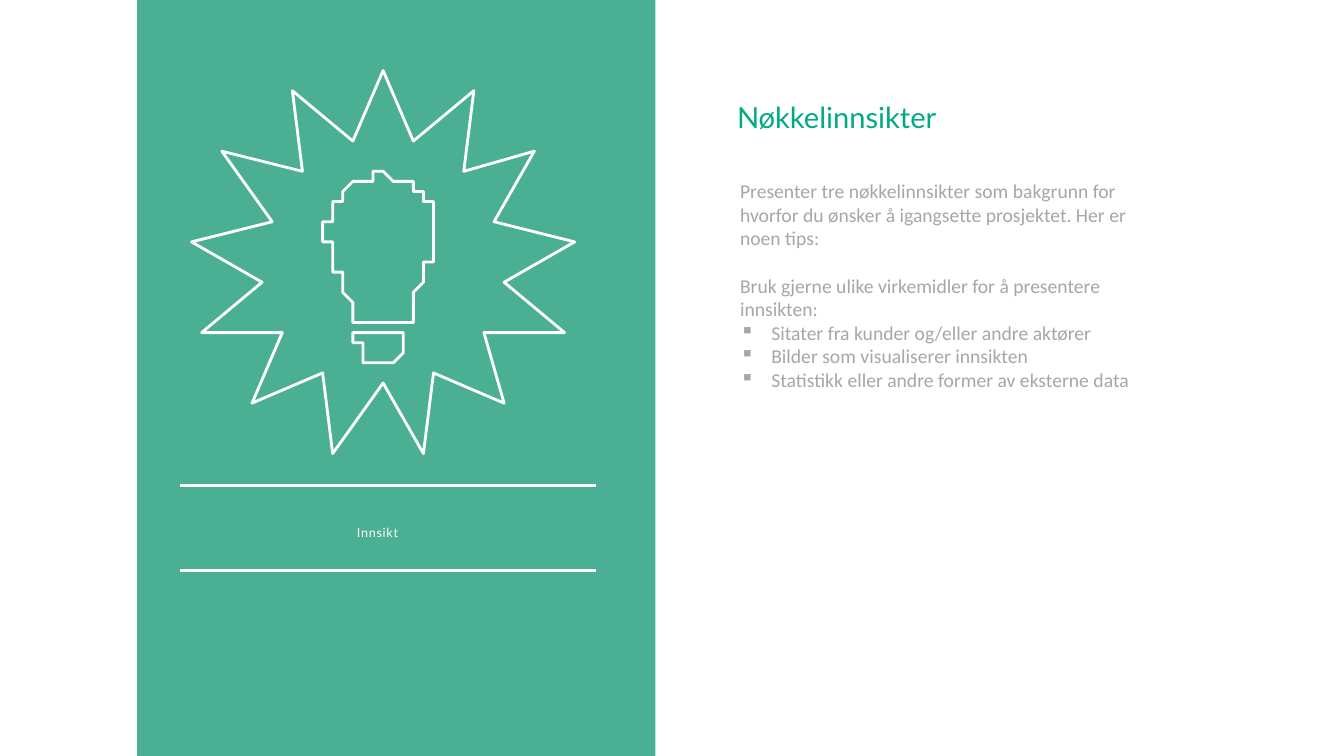
from math import cos, pi, radians, sin
from lxml.etree import SubElement
from pptx import Presentation
from pptx.dml.color import RGBColor
from pptx.enum.shapes import MSO_CONNECTOR, MSO_SHAPE
from pptx.enum.text import MSO_ANCHOR, MSO_AUTO_SIZE, PP_ALIGN
from pptx.oxml.ns import qn
from pptx.util import Inches, Pt

GREEN = RGBColor(0x4B, 0xAF, 0x94)
TEAL = RGBColor(0x00, 0xAB, 0x84)
GRAY = RGBColor(0xA6, 0xA6, 0xA6)
WHITE = RGBColor(0xFF, 0xFF, 0xFF)
ROWS = 75


class Deck:
    def __init__(self):
        self.show = Presentation()
        self.show.slide_width = Inches(13.33)
        self.show.slide_height = Inches(7.5)
        self.cell = self.show.slide_height // ROWS
        self.slide = self.show.slides.add_slide(self.show.slide_layouts[5])
        self.shapes = self.slide.shapes

    def grid(self, *cells):
        return [round(cell * self.cell) for cell in cells]

    def panel(self, box, color):
        shape = self.shapes.add_shape(MSO_SHAPE.RECTANGLE, *self.grid(*box))
        shape.shadow.inherit = False
        shape.fill.solid()
        shape.fill.fore_color.rgb = color
        shape.line.fill.background()

    def rule(self, left, right, row):
        line = self.shapes.add_connector(
            MSO_CONNECTOR.STRAIGHT, *self.grid(left, row, right, row))
        line.line.color.rgb = WHITE
        line.line.width = Pt(2)
        SubElement(line._element.spPr, qn("a:effectLst"))

    def outline(self, *paths):
        pen = None
        for path in paths:
            if pen is None:
                pen = self.shapes.build_freeform(*path[0], scale=self.cell)
            else:
                pen.move_to(*path[0])
            pen.add_line_segments(path[1:], close=True)
        shape = pen.convert_to_shape()
        shape.shadow.inherit = False
        shape.fill.background()
        shape.line.color.rgb = WHITE
        shape.line.width = Pt(2)

    def frame(self, shape, inset=(0, 0)):
        text = shape.text_frame
        text.word_wrap = True
        text.auto_size = MSO_AUTO_SIZE.NONE
        text.vertical_anchor = MSO_ANCHOR.TOP
        text.margin_left = text.margin_right = Inches(inset[0])
        text.margin_top = text.margin_bottom = Inches(inset[1])
        return text

    def font(self, para, name, size, color):
        para.alignment = PP_ALIGN.LEFT
        para.font.name = name
        para.font.size = Pt(size)
        para.font.color.rgb = color

    def title(self, box, words):
        shape = self.shapes.title
        shape.left, shape.top, shape.width, shape.height = self.grid(*box)
        text = self.frame(shape)
        text.text = words
        self.font(text.paragraphs[0], "Lato", 20.8, TEAL)

    def label(self, box, words):
        text = self.frame(self.shapes.add_textbox(*self.grid(*box)))
        para = text.paragraphs[0]
        run = para.add_run()
        run.text = words
        para.space_before = Pt(3)
        self.font(para, "Lato", 9, WHITE)
        run.font._element.set("spc", "50")

    def body(self, box, intro, lead, items):
        text = self.frame(
            self.shapes.add_textbox(*self.grid(*box)), (0.03, 0.05))
        text.text = "\n".join([intro, lead, *items])
        for para in text.paragraphs:
            self.font(para, "Calibri", 14, GRAY)
        text.paragraphs[0].space_after = Pt(17)
        for para in text.paragraphs[2:]:
            props = para._p.get_or_add_pPr()
            props.set("marL", str(Inches(0.31)))
            props.set("indent", str(-Inches(0.31)))
            mark = SubElement(props, qn("a:buChar"))
            mark.set("char", "▪")
            props.insert_element_before(mark, "a:tabLst", "a:defRPr")


def arc(row, radius, start, stop, step):
    return [(radius * sin(radians(turn)), row - radius * cos(radians(turn)))
            for turn in range(start, stop + 1, step)]


def curve(knots, steps=16):
    points = []
    for step in range(steps + 1):
        t = step / steps
        parts = ((1 - t) ** 3, 3 * t * (1 - t) ** 2, 3 * t * t * (1 - t), t ** 3)
        points.append(tuple(sum(part * knot[axis] for part, knot in zip(parts, knots))
                            for axis in (0, 1)))
    return points


def mirror(half, axis):
    return ([(axis + x, y) for x, y in half]
            + [(axis - x, y) for x, y in reversed(half)])


def star(axis, row, tips, outer, inner):
    points = []
    for index in range(2 * tips):
        size = inner if index % 2 else outer
        turn = pi * index / tips
        points.append((axis + size * sin(turn), row - size * cos(turn)))
    return points


def main():
    deck = Deck()
    axis = 37.83
    deck.panel((13.6, 0, 51.4, ROWS), GREEN)
    for row in (48.2, 56.6):
        deck.rule(17.9, 59.1, row)
    deck.label((35.4, 52.1, 24.7, 1.5), "Innsikt")

    glass = arc(22.9, 5.45, 0, 108, 4)
    glass += curve([(5, 25.2), (4.3, 26.8), (2.7, 30.6), (2.7, 31.5)])
    glass += [(2.6, 32.2), (2.5, 32.3)]
    socket = [(2.5, 32.8), (2.5, 33.5), (2.2, 33.8), (2.2, 34.5), (1.9, 34.8),
              (1.8, 34.8), (1.8, 35.2), (1.5, 35.5), (1, 35.5)]
    socket += arc(35.3, 1, 110, 180, 10)
    deck.outline(mirror(glass, axis), mirror(socket, axis))
    deck.outline(star(axis, 26.2, 13, 19, 12.1))

    deck.title((73.1, 9.9, 36.2, 6.8), "Nøkkelinnsikter")
    deck.body(
        (73.1, 17.3, 41.2, 24.6),
        "Presenter tre nøkkelinnsikter som bakgrunn for hvorfor du ønsker å "
        "igangsette prosjektet. Her er noen tips:",
        "Bruk gjerne ulike virkemidler for å presentere innsikten:",
        ("Sitater fra kunder og/eller andre aktører",
         "Bilder som visualiserer innsikten",
         "Statistikk eller andre former av eksterne data"))
    deck.show.save("out.pptx")


if __name__ == "__main__":
    main()
